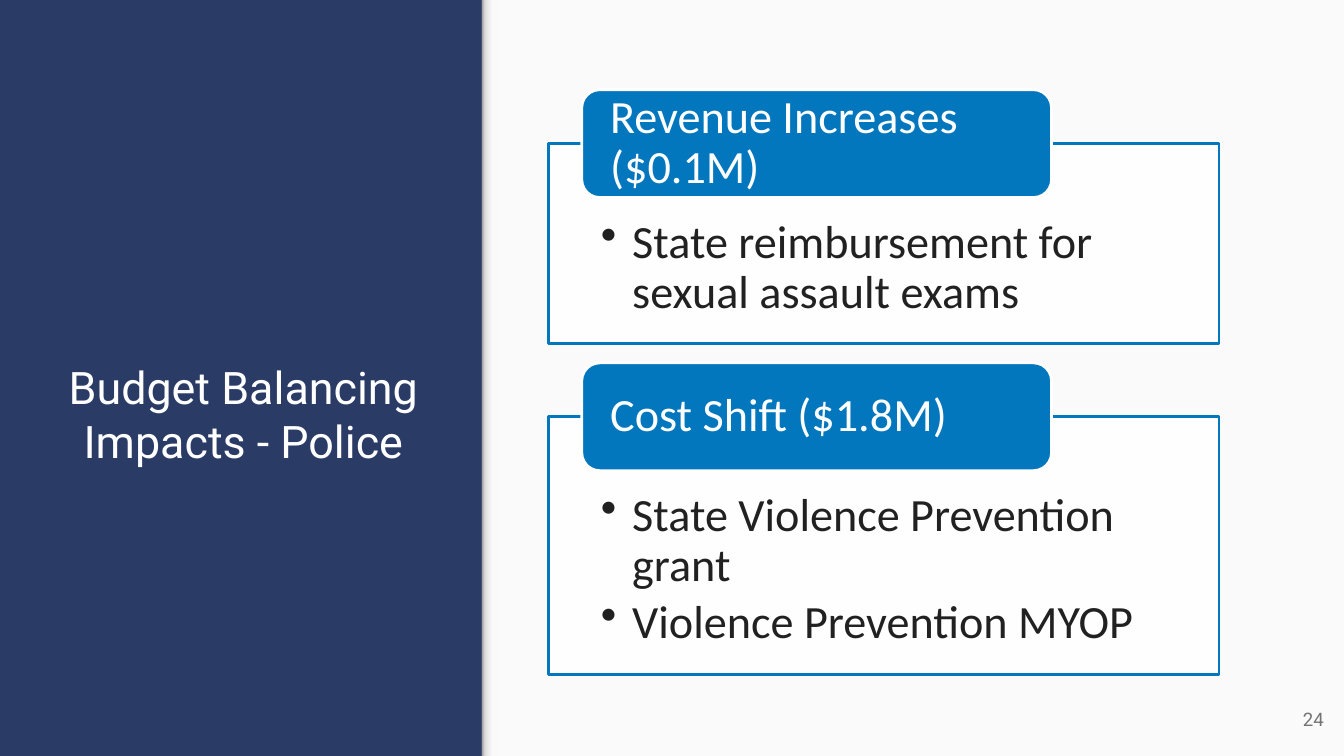
import pptx
import pptx.util
import pptx.dml.color
import pptx.enum.shapes
import pptx.enum.text
import pptx.oxml
import pptx.oxml.ns

SCALE = 9144  # EMU in one px, at 100 px to the inch
NAVY, BLUE, PALE, WHITE = "2A3B66", "0277BD", "FAFAFA", "FFFFFF"
INK, GREY = "212121", "737373"
KIND = pptx.enum.shapes.MSO_SHAPE
ALIGN = pptx.enum.text.PP_ALIGN
ANCHOR = pptx.enum.text.MSO_ANCHOR
qn = pptx.oxml.ns.qn

# top and height of each frame, its heading and its points
CARDS = [
    (142, 199, "Revenue Increases ($0.1M)",
     ["State reimbursement for sexual assault exams"]),
    (413, 256, "Cost Shift ($1.8M)",
     ["State Violence Prevention grant", "Violence Prevention MYOP"]),
]


def px(n):
    return pptx.util.Emu(n * SCALE)


def rgb(tone):
    return pptx.dml.color.RGBColor.from_string(tone)


def block(slide, kind, box, fill, line=None):
    shape = slide.shapes.add_shape(kind, *map(px, box))
    shape.shadow.inherit = False
    shape.fill.solid()
    shape.fill.fore_color.rgb = rgb(fill)
    if line:
        shape.line.color.rgb = rgb(line)
        shape.line.width = pptx.util.Pt(2)
    else:
        shape.line.fill.background()
    return shape


def shade(shape, stops):
    """Fill a shape with a left-to-right gradient."""
    shape.fill.gradient()
    shape.fill.gradient_angle = 0
    group = shape.element.spPr.find(qn("a:gradFill")).find(qn("a:gsLst"))
    for old in list(group):
        group.remove(old)
    for pos, tone in stops:
        stop = group.makeelement(qn("a:gs"), {"pos": str(pos * 1000)})
        stop.append(stop.makeelement(qn("a:srgbClr"), {"val": tone}))
        group.append(stop)


def fade(shape, share):
    """Set how opaque a solid fill is, in percent."""
    tone = shape.element.spPr.find(qn("a:solidFill"))[0]
    tone.append(tone.makeelement(qn("a:alpha"), {"val": str(share * 1000)}))


def bullet(para):
    props = para._p.get_or_add_pPr()
    props.set("marL", str(px(31)))
    props.set("indent", str(px(-31)))
    props.append(props.makeelement(qn("a:buChar"), {"char": "•"}))


def write(shape, lines, font, size, tone, align, anchor, pads,
          dots=False, pitch=None, gap=0):
    frame = shape.text_frame
    frame.text = "\n".join(lines)
    frame.word_wrap = True
    frame.auto_size = pptx.enum.text.MSO_AUTO_SIZE.NONE
    frame.vertical_anchor = anchor
    (frame.margin_left, frame.margin_top,
     frame.margin_right, frame.margin_bottom) = map(px, pads)
    for para in frame.paragraphs:
        para.alignment = align
        if pitch:
            para.line_spacing = pitch
        if dots:
            bullet(para)
        para.space_after = pptx.util.Pt(gap)
        for run in para.runs:
            run.font.name = font
            run.font.size = pptx.util.Pt(size)
            run.font.color.rgb = rgb(tone)


def card(slide, top, high, head, points):
    # Frame with bulleted points
    body = block(slide, KIND.RECTANGLE, (544, top, 665, high), WHITE, BLUE)
    fade(body, 90)
    write(body, points, "Calibri", 33, INK, ALIGN.LEFT, ANCHOR.TOP,
          (52, 75, 52, 26), dots=True, pitch=0.9, gap=5)
    # Heading tab across the top edge
    tab = block(slide, KIND.ROUNDED_RECTANGLE, (577, top - 53, 466, 107),
                BLUE, WHITE)
    write(tab, [head], "Calibri", 33, WHITE, ALIGN.LEFT, ANCHOR.MIDDLE,
          (23, 0, 23, 0), pitch=0.9)


def main():
    deck = pptx.Presentation()
    deck.slide_width, deck.slide_height = px(1333), px(750)
    slide = deck.slides.add_slide(deck.slide_layouts[5])

    # Navy ground, pale panel and its soft edge
    slide.background.fill.solid()
    slide.background.fill.fore_color.rgb = rgb(NAVY)
    block(slide, KIND.RECTANGLE, (478, 0, 855, 750), PALE)
    edge = block(slide, KIND.RECTANGLE, (478, 0, 16, 750), PALE)
    shade(edge, [(0, "999999"), (20, "DEDEDE"), (64, "F9F9F9"),
                 (100, "F9F9F9")])

    # Title
    title = slide.shapes.title
    title.left, title.top, title.width, title.height = map(
        px, (37, 284, 409, 190))
    write(title, ["Budget Balancing Impacts - Police"], "Roboto", 32, WHITE,
          ALIGN.CENTER, ANCHOR.BOTTOM, (10, 10, 10, 10))

    # Page number
    page = slide.shapes.add_textbox(*map(px, (1243, 685, 80, 57)))
    write(page, ["24"], "Roboto", 13.3, GREY, ALIGN.RIGHT, ANCHOR.MIDDLE,
          (10, 10, 10, 10))

    # Cards
    for item in CARDS:
        card(slide, *item)

    deck.save("out.pptx")


if __name__ == "__main__":
    main()
